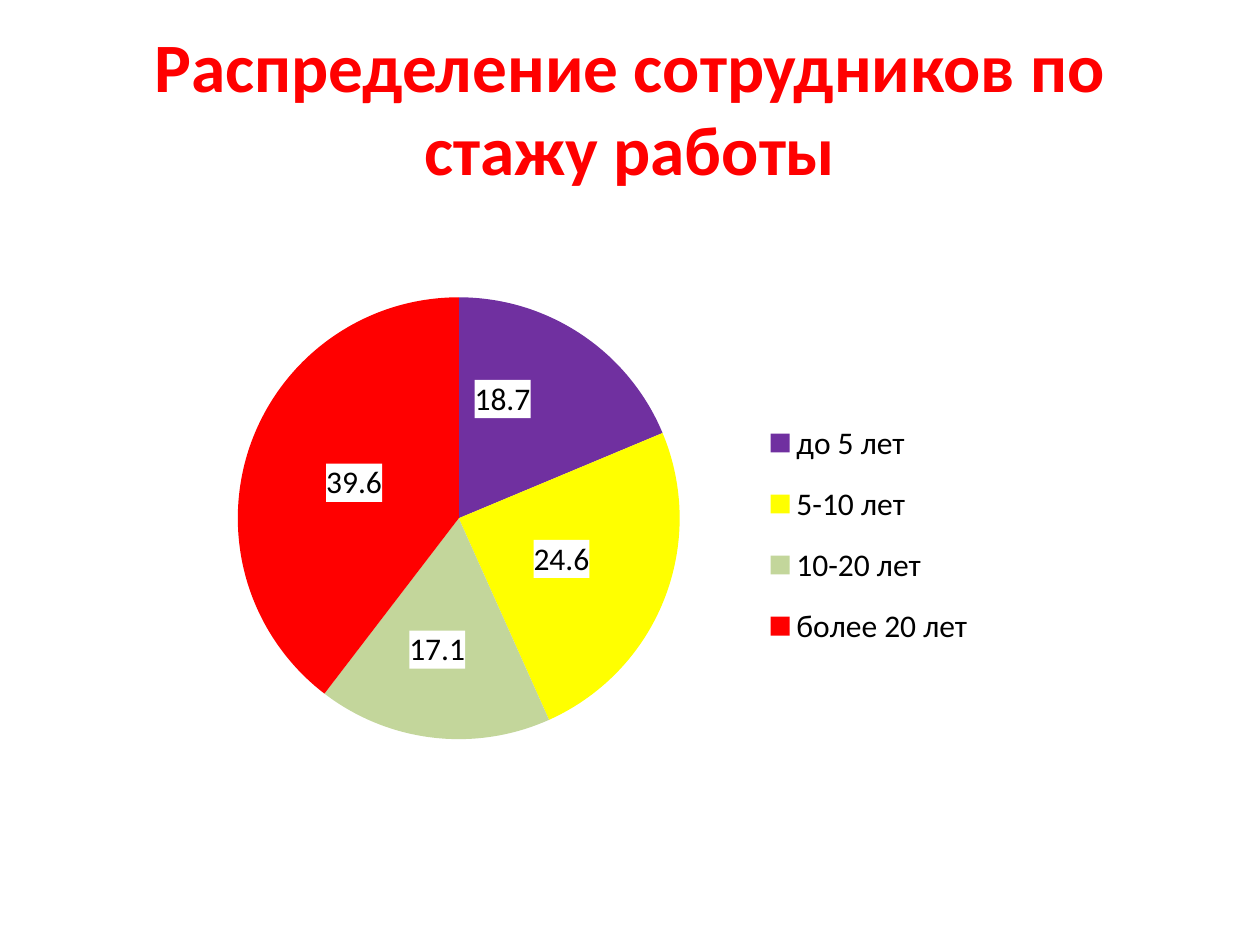
from lxml import etree
from pptx import Presentation
from pptx.chart.data import CategoryChartData
from pptx.dml.color import RGBColor
from pptx.enum.chart import XL_CHART_TYPE, XL_LABEL_POSITION, XL_LEGEND_POSITION
from pptx.enum.text import MSO_ANCHOR, PP_ALIGN
from pptx.oxml import parse_xml
from pptx.oxml.ns import nsdecls
from pptx.util import Pt

PIE = XL_CHART_TYPE.PIE
LABEL_CENTER = XL_LABEL_POSITION.CENTER
LEGEND_BOTTOM = XL_LEGEND_POSITION.BOTTOM
MIDDLE = MSO_ANCHOR.MIDDLE
CENTER = PP_ALIGN.CENTER

FONT = "Calibri"
COLORS = {
    "title": "FF0000",
    "text": "000000",
    "label": "FFFFFF",
    "до 5 лет": "7030A0",
    "5-10 лет": "FFFF00",
    "10-20 лет": "C3D69B",
    "более 20 лет": "FF0000",
}
SHARES = {"до 5 лет": 18.7, "5-10 лет": 24.6, "10-20 лет": 17.1, "более 20 лет": 39.6}
LABEL_SHIFTS = {0: {"x": -0.02, "y": -0.05}, 2: {"x": -0.01, "y": 0.04}}


def manual_layout(settings):
    layout = parse_xml(f"<c:layout {nsdecls('c')}><c:manualLayout/></c:layout>")
    for tag, value in settings.items():
        etree.SubElement(layout[0], f"{{{layout.nsmap['c']}}}{tag}").set("val", str(value))
    return layout


def label_fill():
    return parse_xml(
        f"<c:spPr {nsdecls('c', 'a')}><a:solidFill>"
        f'<a:srgbClr val="{COLORS["label"]}"/></a:solidFill></c:spPr>'
    )


prs = Presentation()
prs.slide_width, prs.slide_height = Pt(720), Pt(540)
slide = prs.slides.add_slide(prs.slide_layouts[5])

title = slide.shapes.title
title.left, title.top, title.width, title.height = Pt(36), Pt(15.84), Pt(648), Pt(90)
title.text_frame.text = "Распределение сотрудников по стажу работы"
title.text_frame.vertical_anchor = MIDDLE
heading = title.text_frame.paragraphs[0]
heading.alignment = CENTER
heading.font.name = FONT
heading.font.size = Pt(39.6)
heading.font.bold = True
heading.font.color.rgb = RGBColor.from_string(COLORS["title"])

tenure_data = CategoryChartData(number_format="0.0")
tenure_data.categories = list(SHARES)
tenure_data.add_series("Series 1", list(SHARES.values()))
chart = slide.shapes.add_chart(
    PIE, Pt(127.44), Pt(151.2), Pt(498.96), Pt(311.76), tenure_data
).chart
chart.has_title = False
chart.font.name = FONT
chart.font.size = Pt(18)
chart.font.color.rgb = RGBColor.from_string(COLORS["text"])

pie = chart.plots[0]
pie.vary_by_categories = True
tenure = pie.series[0]
for index, category in enumerate(SHARES):
    slice_fill = tenure.points[index].format.fill
    slice_fill.solid()
    slice_fill.fore_color.rgb = RGBColor.from_string(COLORS[category])

labels = tenure.data_labels
labels.show_value = True
labels.show_percentage = False
labels.show_category_name = False
labels.show_legend_key = False
labels.position = LABEL_CENTER
labels.font.size = Pt(18)
for index in LABEL_SHIFTS:
    shifted_label = tenure.points[index].data_label
    shifted_label.font.size = Pt(18)
    shifted_label.position = LABEL_CENTER
for text_format in tenure._element.xpath("c:dLbls//c:txPr"):
    for old_fill in text_format.getparent().xpath("c:spPr"):
        text_format.getparent().remove(old_fill)
    text_format.addprevious(label_fill())
for index, shift in LABEL_SHIFTS.items():
    label_index = tenure._element.xpath(f"c:dLbls/c:dLbl/c:idx[@val='{index}']")[0]
    label_index.addnext(manual_layout(shift))

chart.has_legend = True
legend = chart.legend
legend.position = LEGEND_BOTTOM
legend.include_in_layout = False
legend.font.size = Pt(18)
for old_layout in chart._chartSpace.xpath("c:chart/c:legend/c:layout | c:chart/c:plotArea/c:layout"):
    old_layout.getparent().remove(old_layout)
chart._chartSpace.xpath("c:chart/c:legend/c:legendPos")[0].addnext(manual_layout(
    {"xMode": "edge", "yMode": "edge", "x": 0.61, "y": 0.25, "w": 0.26, "h": 0.49}
))
chart._chartSpace.xpath("c:chart/c:plotArea")[0].insert(0, manual_layout(
    {"layoutTarget": "inner", "xMode": "edge", "yMode": "edge",
     "x": 0, "y": 0.06, "w": 0.54, "h": 0.81}
))

prs.save("out.pptx")
